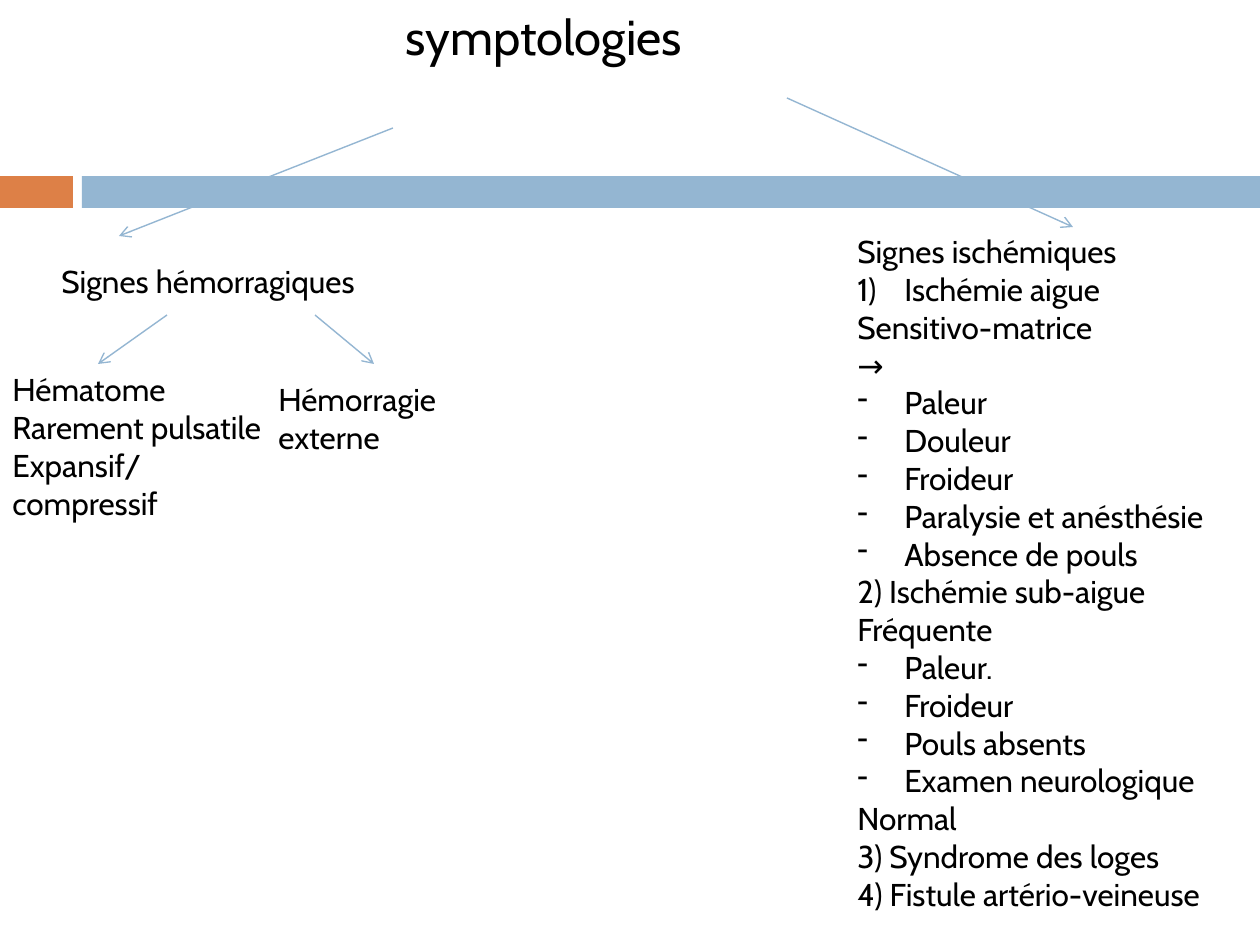
from dataclasses import dataclass

from lxml import etree
from pptx import Presentation
from pptx.dml.color import RGBColor
from pptx.enum.shapes import MSO_CONNECTOR, MSO_SHAPE
from pptx.enum.text import MSO_ANCHOR, MSO_AUTO_SIZE, PP_ALIGN
from pptx.oxml.ns import qn
from pptx.util import Emu, Pt

RECTANGLE = MSO_SHAPE.RECTANGLE
STRAIGHT = MSO_CONNECTOR.STRAIGHT
TOP = MSO_ANCHOR.TOP
NO_FIT = MSO_AUTO_SIZE.NONE
LEFT = PP_ALIGN.LEFT

PX_PER_INCH = 126
FONT = "Cabin"
BLACK, BLUE, ORANGE = "000000", "94B6D2", "DD8047"
HANGING = 47


@dataclass
class Line:
    text: str
    marker: str = ""


@dataclass
class TextBlock:
    left: int
    top: int
    width: int
    height: int
    lines: list[Line]


@dataclass
class Bar:
    left: int
    width: int
    color: str


@dataclass
class Arrow:
    start: tuple[int, int]
    end: tuple[int, int]


def dashes(*texts: str) -> list[Line]:
    return [Line(text, "-") for text in texts]


BAR_TOP, BAR_HEIGHT = 176, 32
BARS = [Bar(0, 73, ORANGE), Bar(82, 1178, BLUE)]
ARROWS = [
    Arrow((393, 128), (119, 236)),
    Arrow((787, 98), (1073, 227)),
    Arrow((315, 315), (374, 364)),
    Arrow((167, 315), (98, 364)),
]
BLOCKS = [
    TextBlock(49, 256, 344, 50, [Line("Signes hémorragiques")]),
    TextBlock(845, 226, 402, 699, [
        Line("Signes ischémiques"),
        Line("Ischémie aigue", "1)"),
        Line("Sensitivo-matrice"),
        Line("→"),
        *dashes("Paleur", "Douleur", "Froideur", "Paralysie et anésthésie",
                "Absence de pouls"),
        Line("2) Ischémie sub-aigue"),
        Line("Fréquente"),
        *dashes("Paleur.", "Froideur", "Pouls absents", "Examen neurologique"),
        Line("Normal"),
        Line("3) Syndrome des loges"),
        Line("4) Fistule artério-veineuse"),
    ]),
    TextBlock(0, 364, 276, 204, [
        Line("Hématome"),
        Line("Rarement pulsatile"),
        Line("Expansif/"),
        Line("compressif"),
    ]),
    TextBlock(266, 374, 237, 89, [Line("Hémorragie externe")]),
]


def px(length: int) -> Emu:
    return Emu(round(length * 914400 / PX_PER_INCH))


def rgb(color: str) -> RGBColor:
    return RGBColor.from_string(color)


def set_font(para, size: int) -> None:
    para.font.name = FONT
    para.font.size = Pt(size)
    para.font.color.rgb = rgb(BLACK)


def add_marker(para, marker: str) -> None:
    """Give the paragraph a hanging indent and a dash or number."""
    properties = para._p.get_or_add_pPr()
    properties.set("marL", str(px(HANGING)))
    properties.set("indent", str(-px(HANGING)))
    if marker == "-":
        etree.SubElement(properties, qn("a:buChar"), char=marker)
    else:
        etree.SubElement(properties, qn("a:buAutoNum"), type="arabicParenR")


def write_title(page, text: str) -> None:
    title = page.shapes.title
    title.left, title.top, title.width, title.height = map(px, (393, 0, 601, 108))
    frame = title.text_frame
    frame.auto_size = NO_FIT
    frame.vertical_anchor = TOP
    frame.text = text
    para = frame.paragraphs[0]
    para.alignment = LEFT
    set_font(para, 28)


def draw_bar(page, bar: Bar) -> None:
    shape = page.shapes.add_shape(
        RECTANGLE, px(bar.left), px(BAR_TOP), px(bar.width), px(BAR_HEIGHT))
    shape.shadow.inherit = False
    shape.fill.solid()
    shape.fill.fore_color.rgb = rgb(bar.color)
    shape.line.fill.background()


def draw_arrow(page, arrow: Arrow) -> None:
    connector = page.shapes.add_connector(
        STRAIGHT, *map(px, arrow.start + arrow.end))
    connector.line.color.rgb = rgb(BLUE)
    connector.line.width = Pt(0.79)
    etree.SubElement(connector.line._get_or_add_ln(), qn("a:tailEnd"), type="arrow")
    etree.SubElement(connector._element.spPr, qn("a:effectLst"))


def draw_block(page, block: TextBlock) -> None:
    box = page.shapes.add_textbox(
        px(block.left), px(block.top), px(block.width), px(block.height))
    frame = box.text_frame
    frame.word_wrap = True
    for index, line in enumerate(block.lines):
        para = frame.add_paragraph() if index else frame.paragraphs[0]
        para.text = line.text
        if line.marker:
            add_marker(para, line.marker)
        set_font(para, 18)


def main() -> None:
    deck = Presentation()
    deck.slide_width, deck.slide_height = px(1260), px(945)
    page = deck.slides.add_slide(deck.slide_layouts[5])
    write_title(page, "symptologies")
    for bar in BARS:
        draw_bar(page, bar)
    for arrow in ARROWS:
        draw_arrow(page, arrow)
    for block in BLOCKS:
        draw_block(page, block)
    deck.save("out.pptx")


if __name__ == "__main__":
    main()
